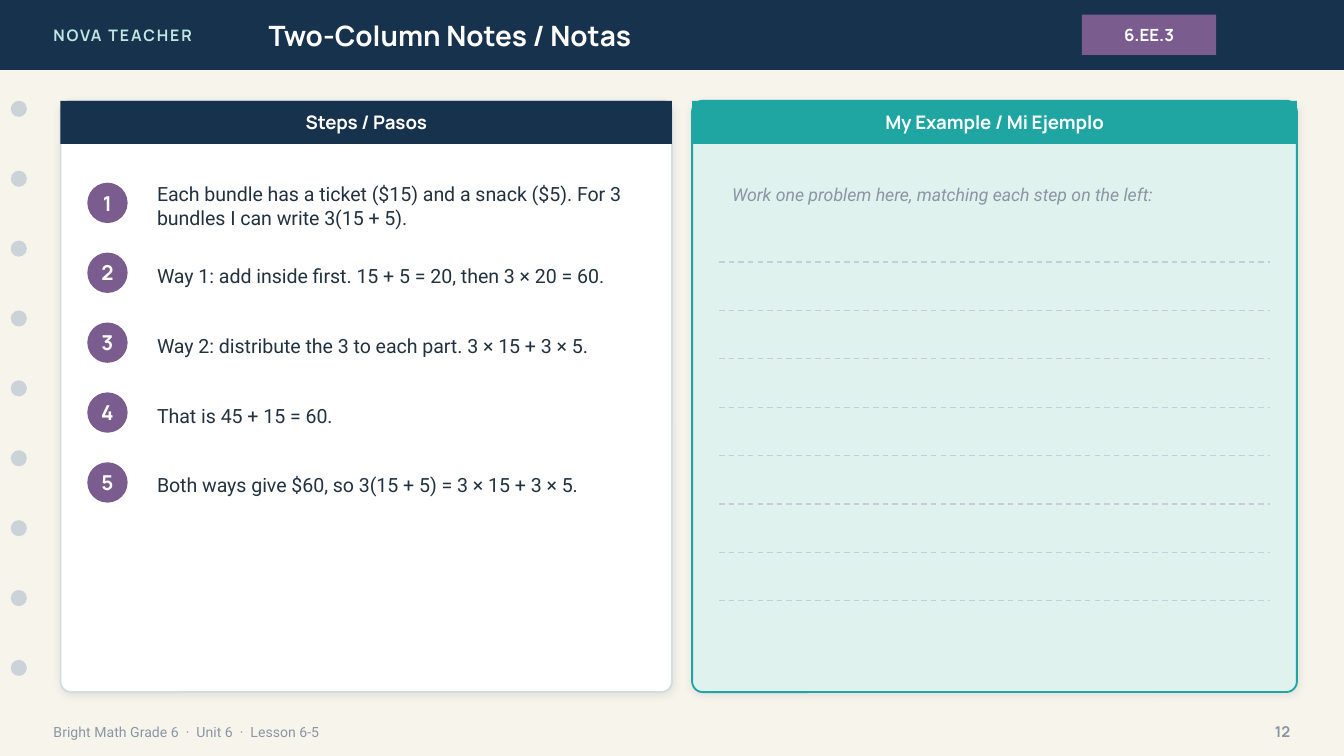
from dataclasses import dataclass

from lxml import etree
from pptx import Presentation
from pptx import util as u
from pptx.dml.color import RGBColor
from pptx.enum import dml, shapes, text
from pptx.oxml.ns import qn

PX = 4572  # EMU per px, 200 px to the inch


@dataclass(frozen=True)
class Theme:
    paper: str = "F7F4EC"
    navy: str = "17324D"
    purple: str = "7A5C8E"
    teal: str = "1FA6A2"
    mint: str = "DFF2EE"
    pale_mint: str = "BFE6E2"
    white: str = "FFFFFF"
    ink: str = "24323F"
    muted: str = "8A96A3"
    hole: str = "CBD3D9"
    border: str = "D6DBDF"
    rule: str = "C7CDD2"
    shadow: str = "1C2E42"
    display: str = "Manrope"
    body: str = "Roboto"
    title_size: float = 15
    number_size: float = 11
    step_size: float = 10.5
    heading_size: float = 10
    prompt_size: float = 9.5
    tag_size: float = 9
    brand_size: float = 8.5
    page_size: float = 8
    footer_size: float = 7.5


THEME = Theme()
SHAPE = shapes.MSO_SHAPE
ALIGN = text.PP_ALIGN

STEPS = [
    "Each bundle has a ticket ($15) and a snack ($5). For 3 bundles I can write 3(15 + 5).",
    "Way 1: add inside first. 15 + 5 = 20, then 3 × 20 = 60.",
    "Way 2: distribute the 3 to each part. 3 × 15 + 3 × 5.",
    "That is 45 + 15 = 60.",
    "Both ways give $60, so 3(15 + 5) = 3 × 15 + 3 × 5.",
]
ROW_PITCH = 104  # shared by the binder holes and the steps
PANEL_TOP, PANEL_HEIGHT = 150, 880


def px(*lengths):
    return [u.Emu(length * PX) for length in lengths]


def rgb(color):
    return RGBColor.from_string(color)


def write(shape, words, *, size, color, font=THEME.display, bold=False,
          italic=False, align=ALIGN.LEFT, spacing=None):
    """Put one formatted, vertically centred paragraph into a shape."""
    frame = shape.text_frame
    frame.word_wrap = True
    frame.vertical_anchor = text.MSO_ANCHOR.MIDDLE
    paragraph = frame.paragraphs[0]
    paragraph.alignment = align
    run = paragraph.add_run()
    run.text = words
    run.font.name, run.font.size = font, u.Pt(size)
    run.font.bold, run.font.italic = bold, italic
    run.font.color.rgb = rgb(color)
    if spacing is not None:
        run.font._element.set("spc", str(int(spacing * 100)))


def add_text(slide, box, words, **style):
    write(slide.shapes.add_textbox(*px(*box)), words, **style)


def add_block(slide, kind, box, fill, line=None):
    shape = slide.shapes.add_shape(kind, *px(*box))
    shape.shadow.inherit = False
    shape.fill.solid()
    shape.fill.fore_color.rgb = rgb(fill)
    if line:
        shape.line.color.rgb = rgb(line)
        shape.line.width = u.Pt(1)
    else:
        shape.line.fill.background()
    return shape


def add_soft_shadow(shape):
    effects = shape._element.spPr.find(qn("a:effectLst"))
    shadow = etree.SubElement(effects, qn("a:outerShdw"), blurRad=str(u.Pt(4)),
                              dist=str(u.Pt(1)), dir="5400000", algn="bl", rotWithShape="0")
    color = etree.SubElement(shadow, qn("a:srgbClr"), val=THEME.shadow)
    etree.SubElement(color, qn("a:alpha"), val="10000")


def add_panel(slide, left, width, heading, *, fill, border, accent):
    card = add_block(slide, SHAPE.ROUNDED_RECTANGLE,
                     (left, PANEL_TOP, width, PANEL_HEIGHT), fill, border)
    card.adjustments[0] = 0.018
    add_soft_shadow(card)
    band = add_block(slide, SHAPE.RECTANGLE, (left, PANEL_TOP, width, 64), accent)
    write(band, heading, size=THEME.heading_size, color=THEME.white, bold=True,
          align=ALIGN.CENTER)


def add_step(slide, number, words):
    top = 272 + (number - 1) * ROW_PITCH
    badge = (130, top, 60, 60)
    add_block(slide, SHAPE.OVAL, badge, THEME.purple)
    add_text(slide, badge, str(number), size=THEME.number_size, color=THEME.white,
             bold=True, align=ALIGN.CENTER)
    add_text(slide, (214, top - 12, 756, 92), words, size=THEME.step_size,
             color=THEME.ink, font=THEME.body)


def add_writing_line(slide, left, right, y):
    line = slide.shapes.add_connector(shapes.MSO_CONNECTOR.STRAIGHT, *px(left, y, right, y))
    line.line.color.rgb = rgb(THEME.rule)
    line.line.width = u.Pt(0.75)
    line.line.dash_style = dml.MSO_LINE.DASH
    etree.SubElement(line._element.spPr, qn("a:effectLst"))


def add_header(slide):
    add_block(slide, SHAPE.RECTANGLE, (0, 0, 2000, 104), THEME.navy)
    add_text(slide, (60, 0, 480, 104), "NOVA TEACHER", size=THEME.brand_size,
             color=THEME.pale_mint, bold=True, spacing=1)
    add_text(slide, (380, 0, 1120, 104), "Two-Column Notes / Notas",
             size=THEME.title_size, color=THEME.white, bold=True)
    tag = add_block(slide, SHAPE.RECTANGLE, (1610, 22, 200, 60), THEME.purple)
    write(tag, "6.EE.3", size=THEME.tag_size, color=THEME.white, bold=True,
          align=ALIGN.CENTER)


def add_footer(slide):
    add_text(slide, (60, 1061, 1400, 56), "Bright Math Grade 6  ·  Unit 6  ·  Lesson 6-5",
             size=THEME.footer_size, color=THEME.muted, font=THEME.body)
    add_text(slide, (1840, 1061, 100, 56), "12", size=THEME.page_size,
             color=THEME.muted, bold=True, align=ALIGN.RIGHT)


def main():
    presentation = Presentation()
    presentation.slide_width, presentation.slide_height = px(2000, 1125)
    slide = presentation.slides.add_slide(presentation.slide_layouts[6])
    slide.background.fill.solid()
    slide.background.fill.fore_color.rgb = rgb(THEME.paper)

    add_header(slide)

    # Binder holes down the left edge
    for index in range(9):
        add_block(slide, SHAPE.OVAL, (16, 150 + index * ROW_PITCH, 24, 24), THEME.hole)

    add_footer(slide)

    # Left column: numbered steps
    add_panel(slide, 90, 910, "Steps / Pasos", fill=THEME.white,
              border=THEME.border, accent=THEME.navy)
    for number, words in enumerate(STEPS, start=1):
        add_step(slide, number, words)

    # Right column: space for the student's own example
    add_panel(slide, 1030, 900, "My Example / Mi Ejemplo", fill=THEME.mint,
              border=THEME.teal, accent=THEME.teal)
    add_text(slide, (1070, 250, 820, 80),
             "Work one problem here, matching each step on the left:",
             size=THEME.prompt_size, color=THEME.muted, font=THEME.body, italic=True)
    for index in range(8):
        add_writing_line(slide, 1070, 1890, 390 + index * 72)

    presentation.save("out.pptx")


if __name__ == "__main__":
    main()
